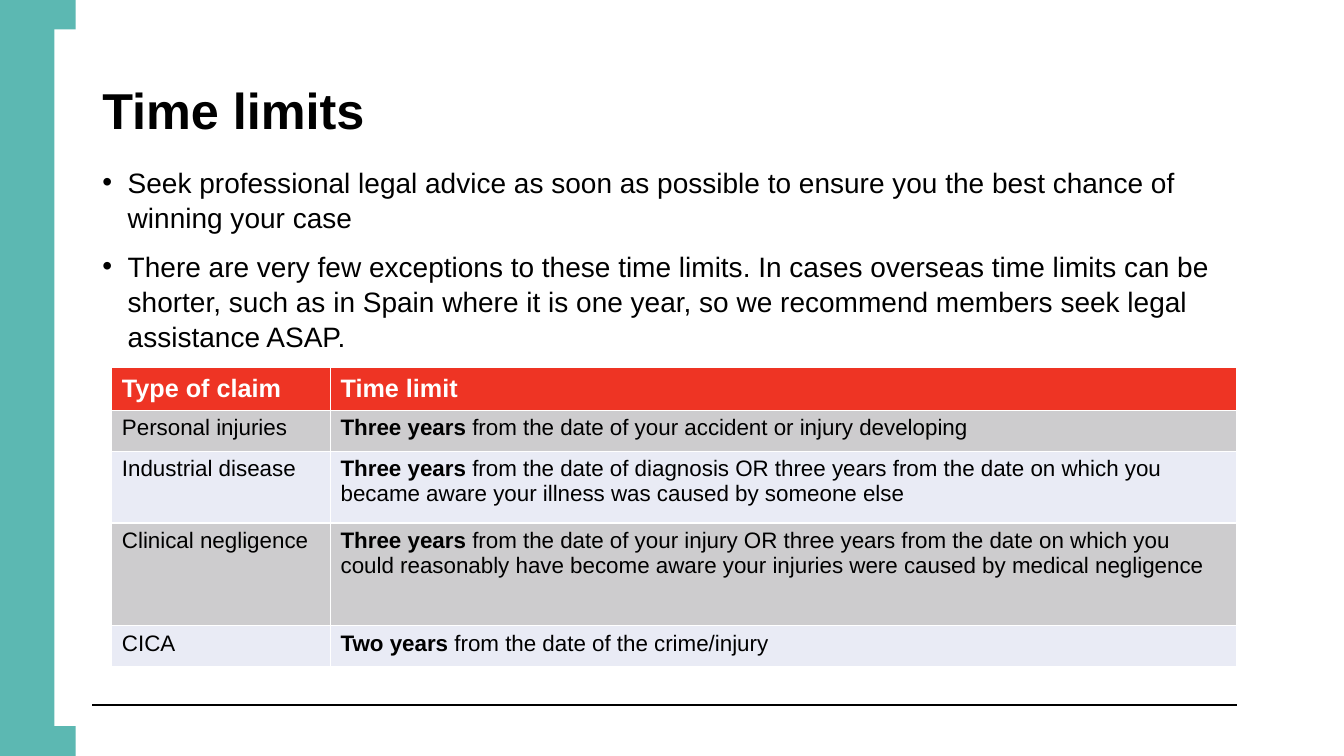
from lxml import etree
from pptx import Presentation
from pptx.dml.color import RGBColor
from pptx.enum.shapes import MSO_CONNECTOR, MSO_SHAPE
from pptx.enum.text import MSO_ANCHOR
from pptx.oxml.ns import qn
from pptx.util import Cm, Pt

TEAL = RGBColor(0x5C, 0xB8, 0xB2)
RED = RGBColor(0xEE, 0x34, 0x24)
GREY = RGBColor(0xCD, 0xCC, 0xCE)
PALE = RGBColor(0xE9, 0xEB, 0xF5)
WHITE = RGBColor(0xFF, 0xFF, 0xFF)
BLACK = RGBColor(0x00, 0x00, 0x00)
RECTANGLE = MSO_SHAPE.RECTANGLE
STRAIGHT = MSO_CONNECTOR.STRAIGHT
MIDDLE = MSO_ANCHOR.MIDDLE

FONT = "Arial"
BULLETS = [
    "Seek professional legal advice as soon as possible to ensure you the best chance of winning your case",
    "There are very few exceptions to these time limits. In cases overseas time limits can be shorter, "
    "such as in Spain where it is one year, so we recommend members seek legal assistance ASAP.",
]
HEADINGS = ["Type of claim", "Time limit"]
CLAIMS = [
    ("Personal injuries", "Three years ", "from the date of your accident or injury developing"),
    ("Industrial disease", "Three years ", "from the date of diagnosis OR three years from the date "
     "on which you became aware your illness was caused by someone else"),
    ("Clinical negligence", "Three years ", "from the date of your injury OR three years from the date on which "
     "you could reasonably have become aware your injuries were caused by medical negligence"),
    ("CICA", "Two years ", "from the date of the crime/injury"),
]
COLUMN_WIDTHS = [5.51, 22.83]
ROW_HEIGHTS = [1.09, 1.04, 1.8, 2.59, 1.02]


def add_run(p, text, size, color=BLACK, bold=False):
    """Append a formatted run to a paragraph."""
    r = p.add_run()
    r.text = text
    r.font.name = FONT
    r.font.size = Pt(size)
    r.font.bold = bold
    r.font.color.rgb = color


def add_block(s, left, top, width, height, color):
    """Draw a plain filled rectangle."""
    block = s.shapes.add_shape(RECTANGLE, Cm(left), Cm(top), Cm(width), Cm(height))
    block.shadow.inherit = False
    block.fill.solid()
    block.fill.fore_color.rgb = color
    block.line.fill.background()


def add_frame(s, left, top, width, height):
    """Draw the teal bracket at the left edge of the given box and the rule at its foot."""
    add_block(s, left, top, 1.91, height, TEAL)
    add_block(s, left + 1.37, top + 0.74, 0.71, height - 1.5, WHITE)
    y = Cm(top + height - 1.29)
    rule = s.shapes.add_connector(STRAIGHT, Cm(left + 2.33), y, Cm(left + width - 2.7), y)
    rule.line.color.rgb = BLACK
    rule.line.width = Pt(1)
    etree.SubElement(rule._element.spPr, qn("a:effectLst"))


def add_text_box(s, left, top, width, height):
    """Add a wrapping text box and return its text frame."""
    tf = s.shapes.add_textbox(Cm(left), Cm(top), Cm(width), Cm(height)).text_frame
    tf.word_wrap = True
    return tf


def add_title(s, left, top, width, height):
    """Place the slide title, centred vertically in its box."""
    tf = add_text_box(s, left, top, width, height)
    tf.vertical_anchor = MIDDLE
    p = tf.paragraphs[0]
    p.line_spacing = 0.9
    add_run(p, "Time limits", 36, bold=True)


def add_bullets(s, left, top, width, height):
    """Place the bulleted advice."""
    tf = add_text_box(s, left, top, width, height)
    for i, text in enumerate(BULLETS):
        p = tf.add_paragraph() if i else tf.paragraphs[0]
        p.line_spacing = 1.04
        if i:
            p.space_before = Pt(10)
        pPr = p._p.get_or_add_pPr()
        pPr.set("marL", str(Cm(0.64)))
        pPr.set("indent", str(-Cm(0.64)))
        etree.SubElement(pPr, qn("a:buFont"), typeface=FONT)
        etree.SubElement(pPr, qn("a:buChar"), char="•")
        add_run(p, text, 20)


def fill_cell(cell, color):
    """Fill a table cell and return its first paragraph."""
    cell.fill.solid()
    cell.fill.fore_color.rgb = color
    return cell.text_frame.paragraphs[0]


def add_claims_table(s, left, top):
    """Place the table of claim types and their time limits."""
    table = s.shapes.add_table(
        len(ROW_HEIGHTS), len(COLUMN_WIDTHS), Cm(left), Cm(top),
        Cm(sum(COLUMN_WIDTHS)), Cm(sum(ROW_HEIGHTS))).table
    for column, width in zip(table.columns, COLUMN_WIDTHS):
        column.width = Cm(width)
    for row, height in zip(table.rows, ROW_HEIGHTS):
        row.height = Cm(height)
    for i, heading in enumerate(HEADINGS):
        cell = table.cell(0, i)
        cell.vertical_anchor = MIDDLE
        add_run(fill_cell(cell, RED), heading, 18, WHITE, True)
    for i, (claim, limit, start) in enumerate(CLAIMS, 1):
        color = GREY if i % 2 else PALE
        add_run(fill_cell(table.cell(i, 0), color), claim, 16)
        p = fill_cell(table.cell(i, 1), color)
        add_run(p, limit, 16, bold=True)
        add_run(p, start, 16)


def main():
    """Build the time limits slide and save it."""
    prs = Presentation()
    prs.slide_width, prs.slide_height = Cm(33.87), Cm(19.05)
    s = prs.slides.add_slide(prs.slide_layouts[6])
    add_frame(s, 0, 0, 33.87, 19.05)
    add_title(s, 2.33, 1.02, 28.84, 3.68)
    add_bullets(s, 2.33, 4.01, 28.84, 11.46)
    add_claims_table(s, 2.82, 9.25)
    prs.save("out.pptx")


if __name__ == "__main__":
    main()
